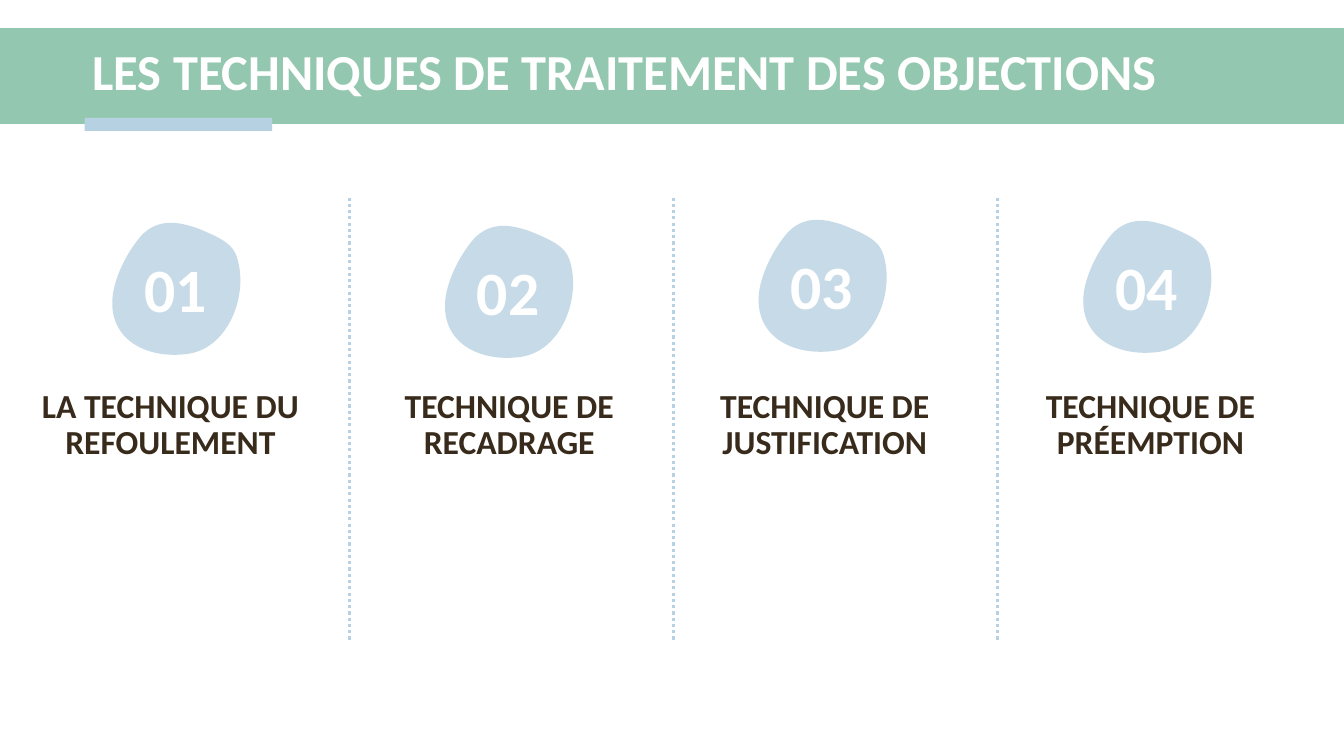
from lxml import etree
from pptx import Presentation, util as u
from pptx.dml.color import RGBColor
from pptx.enum import dml, shapes, text
from pptx.oxml.ns import qn

GREEN = RGBColor(0x94, 0xC7, 0xB0)
BLUE = RGBColor(0xB6, 0xD1, 0xE1)
BROWN = RGBColor(0x38, 0x2B, 0x1B)
WHITE = RGBColor(0xFF, 0xFF, 0xFF)

# Pebble in hundredths of an inch: size, start, then Bezier curves
PEBBLE_WIDTH, PEBBLE_HEIGHT = 127, 131
PEBBLE_START = (77, 3)
PEBBLE_CURVES = [
    ((60, -2), (43, -2), (29, 13)),
    ((16, 28), (4, 51), (1, 71)),
    ((-5, 116), (35, 136), (76, 130)),
    ((116, 124), (136, 71), (124, 34)),
    ((120, 22), (110, 17), (100, 12)),
    ((93, 9), (85, 5), (77, 3)),
]

# Label, label left, pebble left, pebble top
TECHNIQUES = [
    ("LA TECHNIQUE DU REFOULEMENT", 0.23, 1.11, 2.21),
    ("TECHNIQUE DE RECADRAGE", 3.59, 4.41, 2.24),
    ("TECHNIQUE DE JUSTIFICATION", 6.72, 7.52, 2.18),
    ("TECHNIQUE DE PRÉEMPTION", 9.95, 10.74, 2.19),
]


def write(frame, words, size, color, align=text.PP_ALIGN.CENTER, spacing=None,
          anchor=text.MSO_ANCHOR.TOP, font="Calibri", bold=True):
    frame.word_wrap = True
    frame.vertical_anchor = anchor
    paragraph = frame.paragraphs[0]
    paragraph.alignment = align
    paragraph.line_spacing = spacing
    run = paragraph.add_run()
    run.text = words
    run.font.name, run.font.size, run.font.bold = font, u.Pt(size), bold
    run.font.color.rgb = color


def add_path_step(path, tag, points):
    step = etree.SubElement(path, qn(tag))
    for x, y in points:
        etree.SubElement(step, qn("a:pt"), x=str(x), y=str(y))


def round_off(pebble):
    """Replace the straight outline of the freeform with the pebble's curves."""
    path = next(pebble._element.iter(qn("a:path")))
    for step in list(path):
        path.remove(step)
    path.set("w", str(PEBBLE_WIDTH))
    path.set("h", str(PEBBLE_HEIGHT))
    add_path_step(path, "a:moveTo", [PEBBLE_START])
    for curve in PEBBLE_CURVES:
        add_path_step(path, "a:cubicBezTo", curve)
    add_path_step(path, "a:close", [])


class SlideBuilder:
    def __init__(self, slide):
        self.shapes = slide.shapes

    def fill(self, shape, color):
        shape.shadow.inherit = False
        shape.fill.solid()
        shape.fill.fore_color.rgb = color
        shape.line.fill.background()

    def bar(self, left, top, width, height, color):
        bar = self.shapes.add_shape(shapes.MSO_SHAPE.RECTANGLE,
                                    *map(u.Inches, (left, top, width, height)))
        self.fill(bar, color)

    def label(self, words, left, top, width, height, parent=None, **style):
        box = (parent or self.shapes).add_textbox(*map(u.Inches, (left, top, width, height)))
        write(box.text_frame, words, **style)

    def numbered_pebble(self, number, left, top):
        badge = self.shapes.add_group_shape().shapes
        outline = badge.build_freeform(0, 0, scale=u.Inches(0.01))
        outline.add_line_segments([(PEBBLE_WIDTH, 0), (PEBBLE_WIDTH, PEBBLE_HEIGHT),
                                   (0, PEBBLE_HEIGHT)])
        pebble = outline.convert_to_shape(u.Inches(left), u.Inches(top))
        round_off(pebble)
        self.fill(pebble, BLUE)
        tint = next(pebble._element.spPr.iter(qn("a:srgbClr")))
        etree.SubElement(tint, qn("a:alpha"), val="77000")
        self.label(f"{number:02}", left, top + 0.64, 1.26, 1.05, parent=badge,
                   size=44, color=WHITE, spacing=u.Pt(23.4))

    def divider(self, x, top, bottom):
        line = self.shapes.add_connector(shapes.MSO_CONNECTOR.STRAIGHT,
                                         *map(u.Inches, (x, top, x, bottom)))
        line.line.color.rgb = BLUE
        line.line.width = u.Pt(2.25)
        line.line.dash_style = dml.MSO_LINE.ROUND_DOT
        etree.SubElement(line._element.spPr, qn("a:effectLst"))


def main():
    deck = Presentation()
    deck.slide_width, deck.slide_height = u.Inches(13.33), u.Inches(7.5)
    builder = SlideBuilder(deck.slides.add_slide(deck.slide_layouts[6]))

    builder.bar(0, 0.28, 13.33, 0.95, GREEN)
    builder.bar(0.84, 1.17, 1.86, 0.13, BLUE)
    builder.label("LES TECHNIQUES DE TRAITEMENT DES OBJECTIONS", 0.82, 0.34, 11.93, 0.79,
                  size=36, color=WHITE, align=text.PP_ALIGN.LEFT, spacing=0.9,
                  anchor=text.MSO_ANCHOR.MIDDLE)

    for number, (name, label_left, pebble_left, pebble_top) in enumerate(TECHNIQUES, 1):
        builder.label(name, label_left, 3.81, 2.92, 2.42,
                      size=24, color=BROWN, spacing=u.Pt(25.8))
        builder.numbered_pebble(number, pebble_left, pebble_top)

    for gap in range(len(TECHNIQUES) - 1):
        builder.divider(3.47 + 3.21 * gap, 1.96, 6.35)

    deck.save("out.pptx")


if __name__ == "__main__":
    main()
